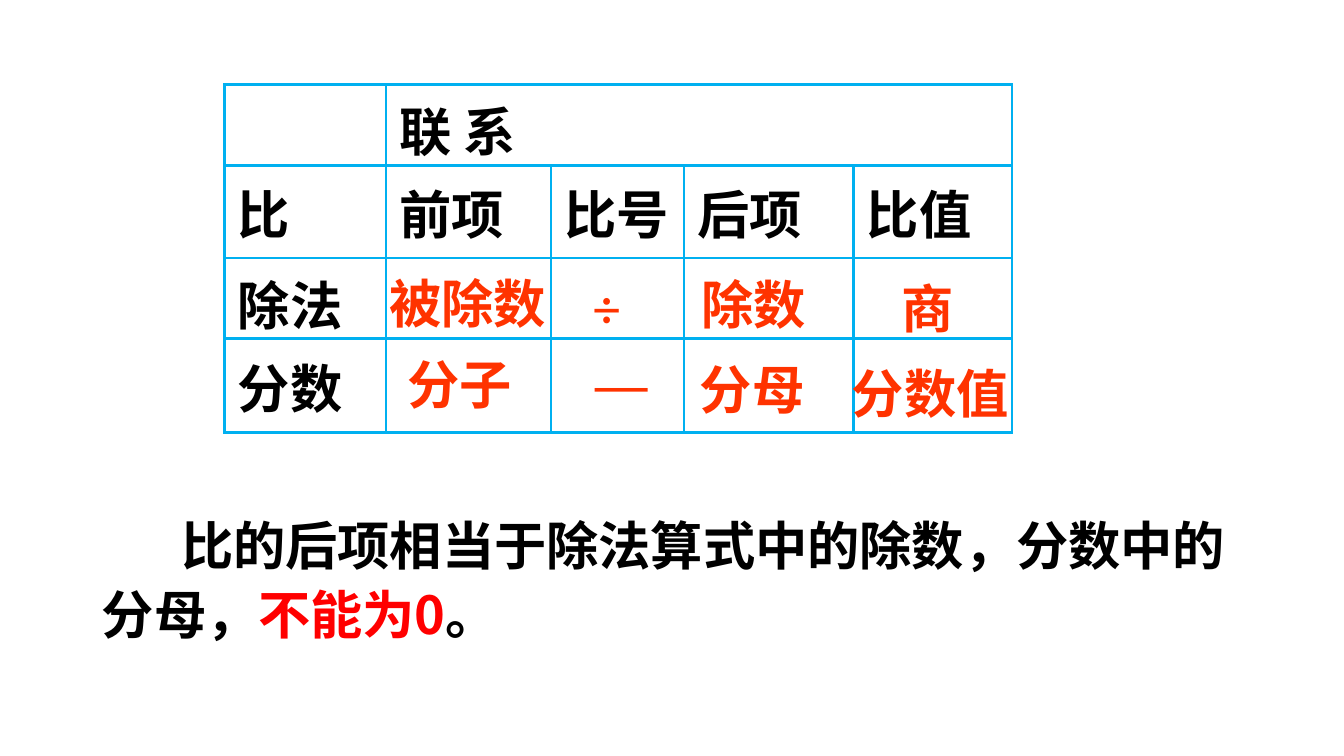
from itertools import product

from lxml.etree import SubElement
from pptx import Presentation
from pptx.dml.color import RGBColor
from pptx.enum.text import MSO_ANCHOR
from pptx.oxml.ns import qn
from pptx.util import Inches, Pt

SANS = "Noto Sans CJK SC"
SERIF = "Times New Roman"
BLACK, ORANGE, RED, BLUE, WHITE = "000000", "FF3300", "FF0000", "00B0F0", "FFFFFF"
SLIDE_WIDTH = Inches(10)
SLIDE_HEIGHT = SLIDE_WIDTH * 9 // 16
COLUMNS = [1.2, 1.23, 0.99, 1.26, 1.18]
ROWS = [0.6, 0.69, 0.6, 0.7]
TERMS = [
    ["", "联 系", "", "", ""],
    ["比", "前项", "比号", "后项", "比值"],
    ["除法", "", "", "", ""],
    ["分数", "", "", "", ""],
]
ANSWERS = [
    ("被除数", 2.8, 1.97, 1.42, SANS),
    ("分子", 2.93, 2.57, 1.18, SANS),
    ("÷", 4.31, 2.01, 0.71, SERIF),
    ("—", 4.33, 2.56, 0.71, SERIF),
    ("除数", 5.12, 1.98, 1.28, SANS),
    ("分母", 5.11, 2.61, 1.28, SANS),
    ("商", 6.61, 2.01, 0.67, SANS),
    ("分数值", 6.24, 2.64, 1.38, SANS),
]
CONCLUSION = [
    ("比的后项相当于除法算式中的除数，分数中的分母，", BLACK),
    ("不能为0", RED),
    ("。", BLACK),
]


def color(code):
    return RGBColor.from_string(code)


def apply_format(target, values):
    for name, value in values.items():
        setattr(target, name, value)


def add_words(paragraph, words, code, face=SANS):
    run = paragraph.add_run()
    run.text = words
    apply_format(run.font, {"size": Pt(28), "bold": True, "name": face})
    run.font.color.rgb = color(code)
    SubElement(run.font._element, qn("a:ea"), typeface=face)


def add_paragraph_box(slide, left, top, width, height):
    frame = slide.shapes.add_textbox(*map(Inches, (left, top, width, height))).text_frame
    frame.word_wrap = True
    return frame.paragraphs[0]


def outline_cell(cell):
    properties = cell._tc.get_or_add_tcPr()
    for position, side in enumerate(("a:lnL", "a:lnR", "a:lnT", "a:lnB")):
        border = properties.makeelement(qn(side), {"w": str(Pt(1.5))})
        fill = SubElement(border, qn("a:solidFill"))
        SubElement(fill, qn("a:srgbClr"), val=BLUE)
        properties.insert(position, border)


def add_comparison(slide):
    table = slide.shapes.add_table(
        len(ROWS), len(COLUMNS), Inches(1.67), Inches(0.63),
        Inches(sum(COLUMNS)), Inches(sum(ROWS)),
    ).table
    apply_format(table, {"first_row": False, "horz_banding": False})
    for column, width in zip(table.columns, COLUMNS):
        column.width = Inches(width)
    for row, height in zip(table.rows, ROWS):
        row.height = Inches(height)
    for row, column in product(range(len(ROWS)), range(len(COLUMNS))):
        cell = table.cell(row, column)
        cell.vertical_anchor = MSO_ANCHOR.MIDDLE
        cell.fill.solid()
        cell.fill.fore_color.rgb = color(WHITE)
        outline_cell(cell)
        if TERMS[row][column]:
            add_words(cell.text_frame.paragraphs[0], TERMS[row][column], BLACK)
    table.cell(0, 1).merge(table.cell(0, len(COLUMNS) - 1))


def add_answer(slide, words, left, top, width, face):
    add_words(add_paragraph_box(slide, left, top, width, 0.57), words, ORANGE, face)


def add_conclusion(slide):
    paragraph = add_paragraph_box(slide, 0.66, 3.72, 8.6, 1.14)
    paragraph.line_spacing = 1.1
    paragraph._p.get_or_add_pPr().set("indent", str(Inches(0.59)))
    for words, code in CONCLUSION:
        add_words(paragraph, words, code)


def main():
    presentation = Presentation()
    apply_format(presentation, {"slide_width": SLIDE_WIDTH, "slide_height": SLIDE_HEIGHT})
    slide = presentation.slides.add_slide(presentation.slide_layouts[6])
    add_conclusion(slide)
    add_comparison(slide)
    for answer in ANSWERS:
        add_answer(slide, *answer)
    presentation.save("out.pptx")


if __name__ == "__main__":
    main()
